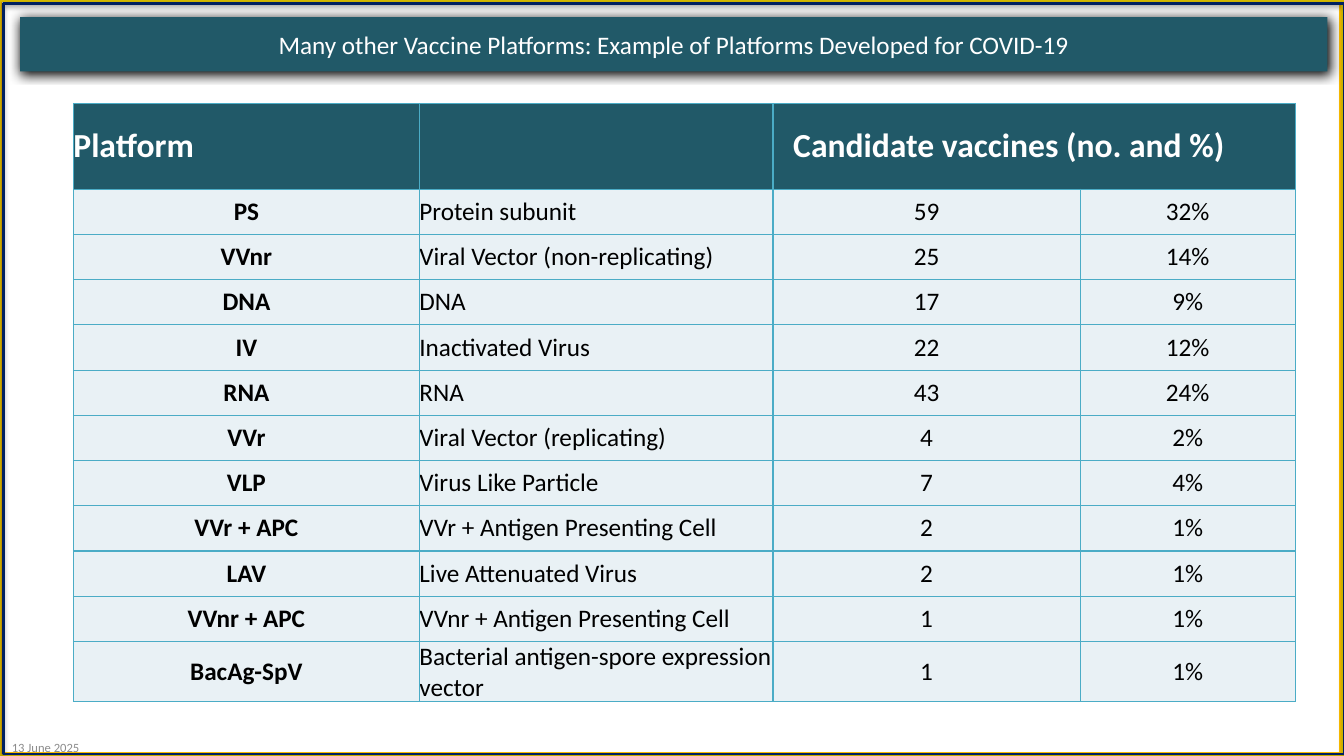
import dataclasses
import typing

import lxml.etree
import pptx
import pptx.dml.color
import pptx.enum.shapes
import pptx.enum.text
import pptx.oxml.ns
import pptx.util

Cm = pptx.util.Cm
Pt = pptx.util.Pt
RGBColor = pptx.dml.color.RGBColor
Align = pptx.enum.text.PP_ALIGN
Anchor = pptx.enum.text.MSO_ANCHOR
qn = pptx.oxml.ns.qn

TEAL = RGBColor(0x21, 0x59, 0x68)
PALE_BLUE = RGBColor(0xE9, 0xF1, 0xF5)
BORDER_BLUE = RGBColor(0x4B, 0xAC, 0xC6)
AMBER = RGBColor(0xFF, 0xC0, 0x00)
GOLD = RGBColor(0xD7, 0xBB, 0x00)
NAVY = RGBColor(0x00, 0x20, 0x60)
GREY = RGBColor(0x8C, 0x8C, 0x8C)
WHITE = RGBColor(0xFF, 0xFF, 0xFF)
BLACK = RGBColor(0x00, 0x00, 0x00)
FONT = "Calibri"


@dataclasses.dataclass(frozen=True)
class Shadow:
    blur: float
    distance: float
    opacity: int


@dataclasses.dataclass(frozen=True)
class Frame:
    left: float
    top: float
    width: float
    height: float
    colour: RGBColor
    weight: float
    shadow: typing.Optional[Shadow] = None


@dataclasses.dataclass(frozen=True)
class Platform:
    code: str
    name: str
    count: int
    percent: int


SOFT_SHADOW = Shadow(3.5, 2.2, 32)
TITLE_SHADOW = Shadow(8.5, 1, 100)

FRAMES = [
    Frame(0, 0, 33.86, 19, AMBER, 0.75),
    Frame(0, 0, 33.81, 19, AMBER, 3),
    Frame(-0.02, 0, 33.88, 19.05, GOLD, 3, SOFT_SHADOW),
    Frame(0.08, 0.08, 33.8, 18.92, NAVY, 2, SOFT_SHADOW),
]

PLATFORMS = [
    Platform("PS", "Protein subunit", 59, 32),
    Platform("VVnr", "Viral Vector (non-replicating)", 25, 14),
    Platform("DNA", "DNA", 17, 9),
    Platform("IV", "Inactivated Virus", 22, 12),
    Platform("RNA", "RNA", 43, 24),
    Platform("VVr", "Viral Vector (replicating)", 4, 2),
    Platform("VLP", "Virus Like Particle", 7, 4),
    Platform("VVr + APC", "VVr + Antigen Presenting Cell", 2, 1),
    Platform("LAV", "Live Attenuated Virus", 2, 1),
    Platform("VVnr + APC", "VVnr + Antigen Presenting Cell", 1, 1),
    Platform("BacAg-SpV", "Bacterial antigen-spore expression vector", 1, 1),
]

COLUMN_WIDTHS = [8.72, 8.91, 7.74, 5.42]
HEADER_HEIGHT = 2.16
ROW_HEIGHT = 1.14


def write(text_frame, text: str, *, size: float, colour: RGBColor,
          bold: bool = False, align=Align.LEFT) -> None:
    para = text_frame.paragraphs[0]
    para.alignment = align
    span = para.add_run()
    span.text = text
    span.font.name = FONT
    span.font.size = Pt(size)
    span.font.bold = bold
    span.font.color.rgb = colour


def set_shadow(shape, shadow: typing.Optional[Shadow]) -> None:
    shape.shadow.inherit = False
    if shadow is None:
        return
    effects = shape.element.spPr.find(qn("a:effectLst"))
    outer = lxml.etree.SubElement(
        effects, qn("a:outerShdw"), blurRad=str(Pt(shadow.blur)),
        dist=str(Pt(shadow.distance)), dir="5400000", rotWithShape="0")
    colour = lxml.etree.SubElement(outer, qn("a:srgbClr"), val=str(BLACK))
    lxml.etree.SubElement(colour, qn("a:alpha"), val=str(shadow.opacity * 1000))


def draw_frame(page, frame: Frame) -> None:
    shape = page.shapes.add_shape(
        pptx.enum.shapes.MSO_SHAPE.RECTANGLE,
        Cm(frame.left), Cm(frame.top), Cm(frame.width), Cm(frame.height))
    shape.fill.background()
    shape.line.color.rgb = frame.colour
    shape.line.width = Pt(frame.weight)
    set_shadow(shape, frame.shadow)


def draw_title(page) -> None:
    title = page.shapes.title
    title.left, title.top = Cm(0.51), Cm(0.43)
    title.width, title.height = Cm(32.94), Cm(1.37)
    title.fill.solid()
    title.fill.fore_color.rgb = TEAL
    set_shadow(title, TITLE_SHADOW)
    title.text_frame.vertical_anchor = Anchor.MIDDLE
    write(title.text_frame,
          "Many other Vaccine Platforms: Example of Platforms Developed for COVID-19",
          size=18, colour=WHITE, align=Align.CENTER)
    page.shapes.element.append(title.element)


def draw_date(page) -> None:
    box = page.shapes.add_textbox(Cm(0.05), Cm(18.49), Cm(3.53), Cm(0.69))
    box.text_frame.word_wrap = True
    box.text_frame.vertical_anchor = Anchor.MIDDLE
    write(box.text_frame, "13 June 2025", size=9, colour=GREY)


def style_cell(cell, fill: RGBColor, indent: float = 0) -> None:
    cell.margin_left = Cm(indent)
    cell.margin_right = cell.margin_top = cell.margin_bottom = 0
    cell.vertical_anchor = Anchor.MIDDLE
    properties = cell._tc.get_or_add_tcPr()
    for side in ("L", "R", "T", "B"):
        line = lxml.etree.SubElement(properties, qn(f"a:ln{side}"), w=str(Pt(1)))
        solid = lxml.etree.SubElement(line, qn("a:solidFill"))
        lxml.etree.SubElement(solid, qn("a:srgbClr"), val=str(BORDER_BLUE))
    cell.fill.solid()
    cell.fill.fore_color.rgb = fill


def draw_table(page) -> None:
    height = HEADER_HEIGHT + ROW_HEIGHT * len(PLATFORMS)
    table = page.shapes.add_table(
        len(PLATFORMS) + 1, len(COLUMN_WIDTHS), Cm(1.85), Cm(2.61),
        Cm(sum(COLUMN_WIDTHS)), Cm(height)).table
    for column, width in zip(table.columns, COLUMN_WIDTHS):
        column.width = Cm(width)
    for index, row in enumerate(table.rows):
        row.height = Cm(ROW_HEIGHT if index else HEADER_HEIGHT)

    table.cell(0, 2).merge(table.cell(0, 3))
    for column, heading in enumerate(
            ["Platform", "", "Candidate vaccines (no. and %)", ""]):
        cell = table.cell(0, column)
        style_cell(cell, TEAL, indent=0.51 if column == 2 else 0)
        if heading:
            write(cell.text_frame, heading, size=24, colour=WHITE, bold=True)

    for row, platform in enumerate(PLATFORMS, start=1):
        values = [platform.code, platform.name,
                  str(platform.count), f"{platform.percent}%"]
        for column, value in enumerate(values):
            cell = table.cell(row, column)
            style_cell(cell, PALE_BLUE)
            write(cell.text_frame, value, size=18, colour=BLACK, bold=column == 0,
                  align=Align.LEFT if column == 1 else Align.CENTER)


def main() -> None:
    deck = pptx.Presentation()
    deck.slide_width, deck.slide_height = Cm(33.87), Cm(19.05)
    page = deck.slides.add_slide(deck.slide_layouts[5])
    for frame in FRAMES:
        draw_frame(page, frame)
    draw_title(page)
    draw_date(page)
    draw_table(page)
    deck.save("out.pptx")


if __name__ == "__main__":
    main()
